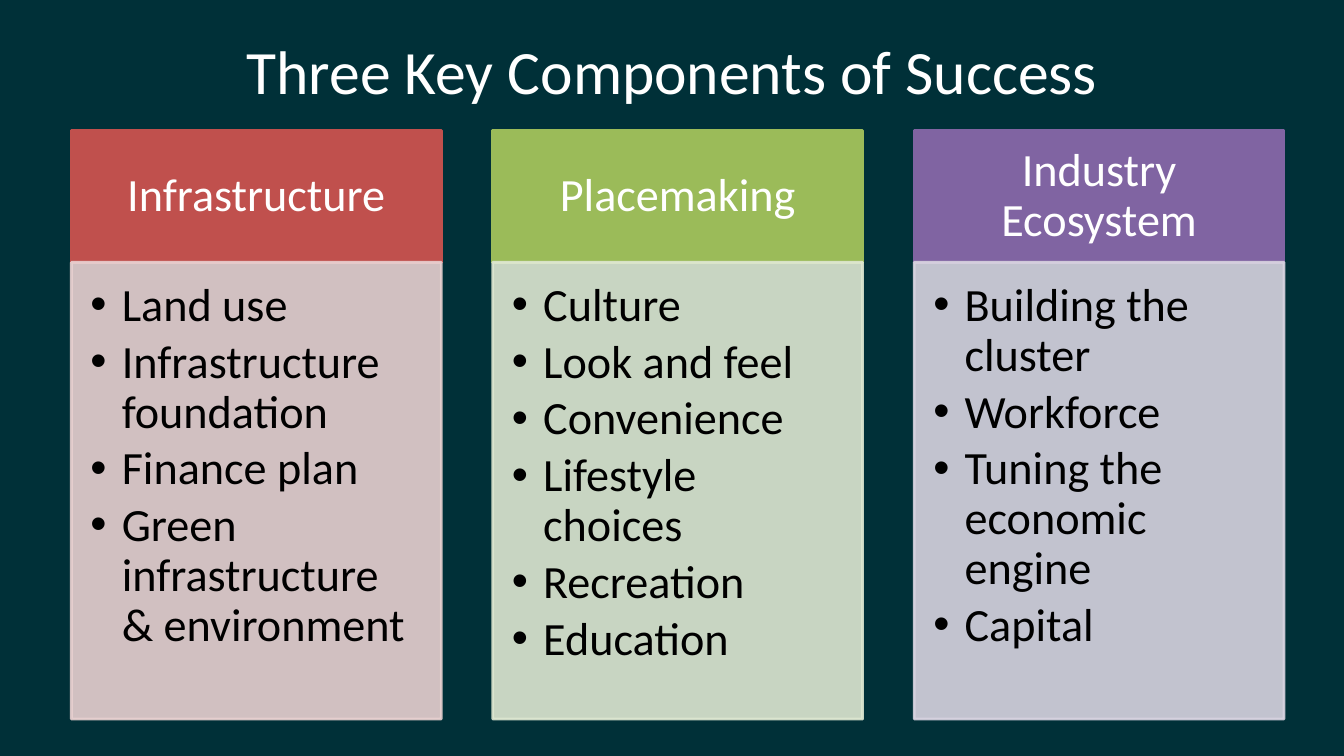
from dataclasses import dataclass

from lxml import etree
from pptx import Presentation
from pptx.dml.color import RGBColor
from pptx.enum.shapes import MSO_SHAPE
from pptx.enum.text import MSO_ANCHOR, MSO_AUTO_SIZE, PP_ALIGN
from pptx.oxml.ns import qn
from pptx.util import Cm, Pt

RECTANGLE = MSO_SHAPE.RECTANGLE
TOP, MIDDLE = MSO_ANCHOR.TOP, MSO_ANCHOR.MIDDLE
LEFT, CENTER = PP_ALIGN.LEFT, PP_ALIGN.CENTER
NO_AUTOFIT = MSO_AUTO_SIZE.NONE


@dataclass(frozen=True)
class Theme:
    font: str = "Calibri"
    background: str = "003038"
    light_text: str = "FFFFFF"
    dark_text: str = "000000"
    title_size: int = 44
    column_size: int = 33
    outline: int = 2
    panel_opacity: int = 90
    header_fills: tuple = ("C0504D", "9BBB59", "8064A2")
    panel_fills: tuple = ("E8D0D0", "DEE7D1", "D8D3E0")


theme = Theme()


def write_text(shape, lines, size, color, align=CENTER, anchor=MIDDLE,
               insets=(0.25, 0.13, 0.25, 0.13), line_spacing=0.9,
               space_after=0, bullet_indent=None):
    """Fill a shape with one paragraph per line; lengths are in cm."""
    frame = shape.text_frame
    frame.text = "\n".join(lines)
    frame.word_wrap = True
    frame.auto_size = NO_AUTOFIT
    frame.vertical_anchor = anchor
    (frame.margin_left, frame.margin_top,
     frame.margin_right, frame.margin_bottom) = map(Cm, insets)
    for paragraph in frame.paragraphs:
        paragraph.alignment = align
        paragraph.line_spacing = line_spacing
        paragraph.space_after = Pt(space_after)
        font = paragraph.runs[0].font
        font.name = theme.font
        font.size = Pt(size)
        font.color.rgb = RGBColor.from_string(color)
        if bullet_indent:
            properties = paragraph._p.get_or_add_pPr()
            properties.set("marL", str(Cm(bullet_indent)))
            properties.set("indent", str(-Cm(bullet_indent)))
            etree.SubElement(properties, qn("a:buFont")).set("typeface", "Arial")
            etree.SubElement(properties, qn("a:buChar")).set("char", "•")


def add_block(left, top, width, height, color, opacity=100):
    """Add a flat rectangle whose outline matches its fill; lengths in cm."""
    block = slide.shapes.add_shape(
        RECTANGLE, Cm(left), Cm(top), Cm(width), Cm(height))
    block.shadow.inherit = False
    block.fill.solid()
    block.fill.fore_color.rgb = RGBColor.from_string(color)
    block.line.color.rgb = RGBColor.from_string(color)
    block.line.width = Pt(theme.outline)
    if opacity < 100:
        for paint in list(block._element.spPr.iter(qn("a:srgbClr"))):
            etree.SubElement(paint, qn("a:alpha")).set("val", str(opacity * 1000))
    return block


# Slide and background
presentation = Presentation()
presentation.slide_width, presentation.slide_height = Cm(33.87), Cm(19.05)
slide = presentation.slides.add_slide(presentation.slide_layouts[5])
slide.background.fill.solid()
slide.background.fill.fore_color.rgb = RGBColor.from_string(theme.background)

# Title
title = slide.shapes.title
title.left, title.top, title.width, title.height = map(Cm, (5.54, 0.71, 22.81, 2.13))
write_text(title, ["Three Key Components of Success"], theme.title_size,
           theme.light_text, anchor=TOP, line_spacing=1.0)

# Columns: a coloured header above a tinted list panel
components = {
    "Infrastructure": ["Land use", "Infrastructure foundation", "Finance plan",
                       "Green infrastructure & environment"],
    "Placemaking": ["Culture", "Look and feel", "Convenience",
                    "Lifestyle choices", "Recreation", "Education"],
    "Industry Ecosystem": ["Building the cluster", "Workforce",
                           "Tuning the economic engine", "Capital"],
}
first_left, column_width, column_pitch = 1.8, 9.32, 10.62
header_top, header_height, panel_height = 3.28, 3.33, 11.51

for index, (heading, items) in enumerate(components.items()):
    left = first_left + index * column_pitch
    header = add_block(left, header_top, column_width, header_height,
                       theme.header_fills[index])
    write_text(header, [heading], theme.column_size, theme.light_text,
               insets=(0.66, 0.38, 0.66, 0.38))
    panel = add_block(left, header_top + header_height, column_width, panel_height,
                      theme.panel_fills[index], theme.panel_opacity)
    write_text(panel, items, theme.column_size, theme.dark_text, align=LEFT,
               anchor=TOP, insets=(0.48, 0.48, 0.66, 0.74), space_after=5,
               bullet_indent=0.79)

presentation.save("out.pptx")
